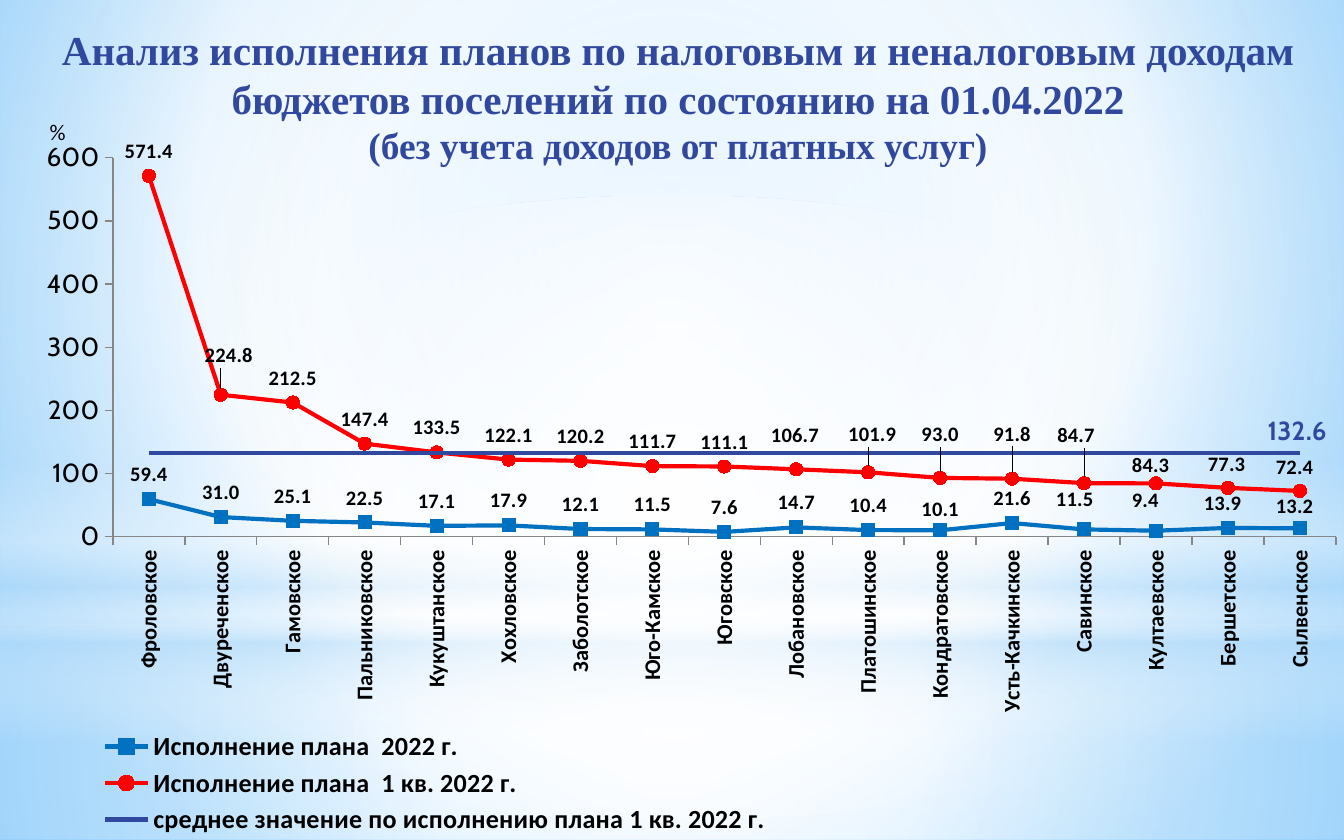
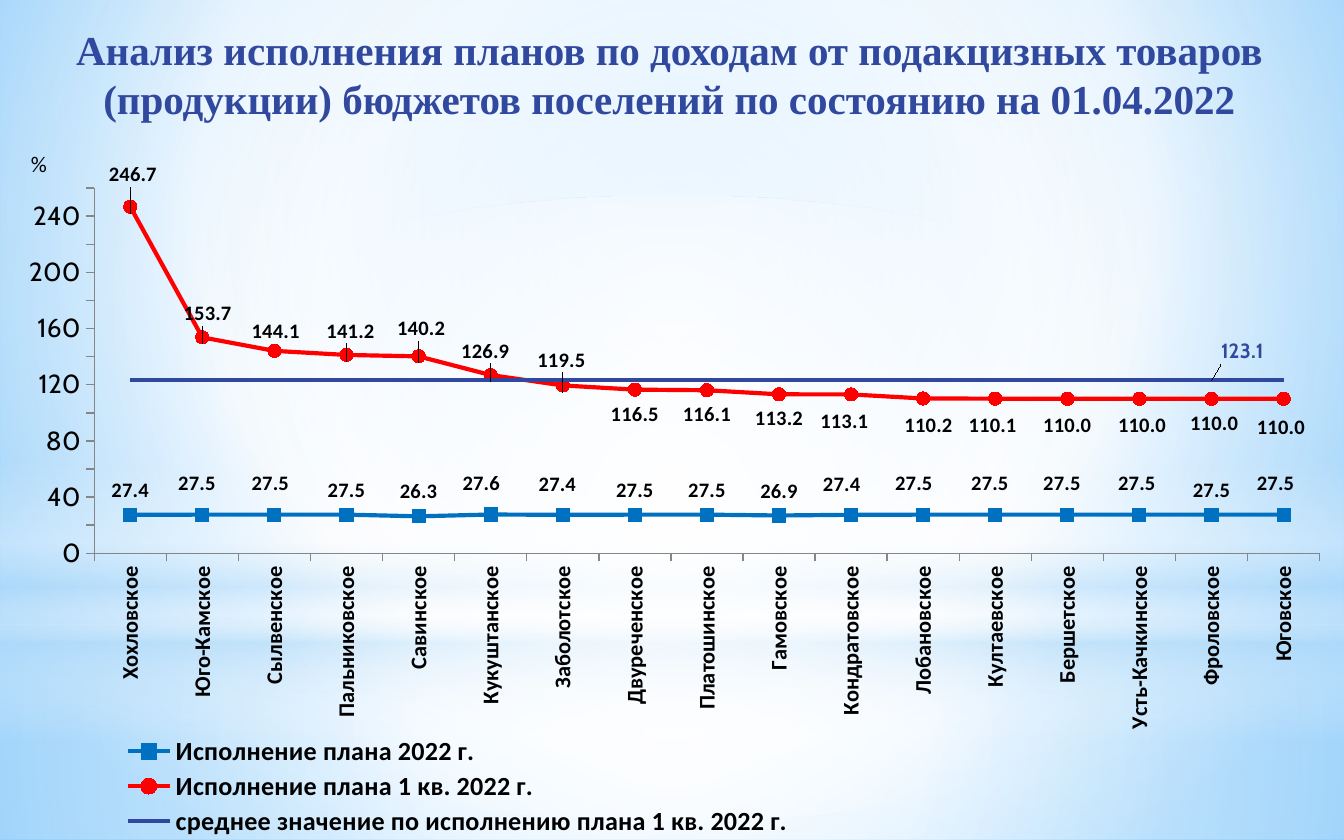
from dataclasses import dataclass, field

from lxml import etree
from pptx import Presentation
from pptx.chart.data import CategoryChartData
from pptx.dml.color import RGBColor
from pptx.enum import chart as ch, shapes, text
from pptx.oxml import parse_xml
from pptx.oxml.ns import nsdecls, qn
from pptx.util import Inches, Pt

INDIGO = RGBColor(0x31, 0x48, 0x9F)
BLUE = RGBColor(0x00, 0x70, 0xC0)
RED = RGBColor(0xFF, 0x00, 0x00)
BLACK = RGBColor(0x00, 0x00, 0x00)
GREY = RGBColor(0x86, 0x86, 0x86)
WHITE = RGBColor(0xFF, 0xFF, 0xFF)
PALE = RGBColor(0xB4, 0xDC, 0xFA)
SKY = RGBColor(0x9E, 0xD5, 0xFF)
DEEP_SKY = RGBColor(0x5B, 0xB9, 0xFF)

TITLE_FONT, CHART_FONT, LABEL_FONT = "Times New Roman", "Cabin", "Calibri"
LABEL_FORMAT = "#,##0.0"
ABOVE, BELOW = ch.XL_LABEL_POSITION.ABOVE, ch.XL_LABEL_POSITION.BELOW
LEADER_EXT = (
    '<c:extLst xmlns:c="http://schemas.openxmlformats.org/drawingml/2006/chart">'
    '<c:ext uri="{CE6537A1-D6FC-4f65-9D91-7224C49458BB}" '
    'xmlns:c15="http://schemas.microsoft.com/office/drawing/2012/chart">'
    '<c15:showLeaderLines val="1"/></c:ext></c:extLst>'
)

Stop = tuple[int, RGBColor, int]      # position %, colour, opacity %
Box = tuple[float, float, float, float]
Nudges = dict[int, tuple[float, float]]  # point index -> label shift in inches


@dataclass
class Glow:
    kind: shapes.MSO_SHAPE
    box: Box
    stops: list[Stop]
    linear: bool = False


@dataclass
class Line:
    name: str
    values: list[float]
    color: RGBColor
    marker: ch.XL_MARKER_STYLE
    position: ch.XL_LABEL_POSITION = ABOVE
    nudges: Nudges = field(default_factory=dict)
    label_all: bool = True
    label_size: int = 11
    label_font: str = LABEL_FONT
    label_color: RGBColor = BLACK
    leader: bool = False


@dataclass
class Report:
    title: list[tuple[str, int]]
    title_box: Box
    chart_box: Box
    categories: list[str]
    lines: list[Line]
    top: int
    step: int
    plot: Box
    legend: Box
    unit: tuple[float, float]


GLOWS = [
    Glow(shapes.MSO_SHAPE.RECTANGLE, (0, 4.65, 10, 1.6),
         [(0, WHITE, 91), (37, WHITE, 76), (100, PALE, 79)]),
    Glow(shapes.MSO_SHAPE.RECTANGLE, (0, 0, 10, 4.65),
         [(0, WHITE, 89), (48, WHITE, 62), (100, PALE, 79)]),
    Glow(shapes.MSO_SHAPE.RECTANGLE, (0, 3.43, 10, 2.08),
         [(0, WHITE, 0), (29, WHITE, 30), (45, PALE, 40), (55, WHITE, 26),
          (65, PALE, 60), (100, WHITE, 0)], linear=True),
    Glow(shapes.MSO_SHAPE.OVAL, (0, 1.46, 10, 4.65), [(0, WHITE, 100), (56, WHITE, 0)]),
]


def report_lines(names: list[str], year: list[float], quarter: list[float], mean: float,
                 year_nudges: Nudges, quarter_nudges: Nudges, mean_nudges: Nudges,
                 quarter_position=ABOVE, mean_size: int = 14, leader: bool = False) -> list[Line]:
    marks = ch.XL_MARKER_STYLE
    return [
        Line(names[0], year, BLUE, marks.SQUARE, nudges=year_nudges),
        Line(names[1], quarter, RED, marks.CIRCLE, quarter_position, quarter_nudges),
        Line("среднее значение по исполнению плана 1 кв. 2022 г.", [mean] * len(year), INDIGO,
             marks.NONE, nudges=mean_nudges, label_all=False, label_size=mean_size,
             label_font=CHART_FONT, label_color=INDIGO, leader=leader),
    ]


REPORTS = [
    Report(
        [("Анализ исполнения планов по налоговым и неналоговым доходам "
          "бюджетов поселений по состоянию на 01.04.2022", 22),
         ("(без учета доходов от платных услуг)", 20)],
        (0.2, 0.13, 9.69, 0.97), (0.04, 0.61, 10, 5.64),
        ["Фроловское", "Двуреченское", "Гамовское", "Пальниковское", "Кукуштанское",
         "Хохловское", "Заболотское", "Юго-Камское", "Юговское", "Лобановское",
         "Платошинское", "Кондратовское", "Усть-Качкинское", "Савинское", "Култаевское",
         "Бершетское", "Сылвенское"],
        report_lines(
            ["Исполнение плана  2022 г.", "Исполнение плана  1 кв. 2022 г."],
            [59.4, 31, 25.1, 22.5, 17.1, 17.9, 12.1, 11.5, 7.6, 14.7, 10.4, 10.1, 21.6,
             11.5, 9.4, 13.9, 13.2],
            [571.4, 224.8, 212.5, 147.4, 133.5, 122.1, 120.2, 111.7, 111.1, 106.7, 101.9,
             93, 91.8, 84.7, 84.3, 77.3, 72.4],
            132.6,
            {11: (0, 0.03), 13: (-0.07, -0.04), 14: (-0.08, -0.04), 15: (-0.04, 0),
             16: (-0.04, 0.02)},
            {1: (0.06, -0.11), 9: (-0.01, -0.07), 10: (0.03, -0.1), 11: (0, -0.14),
             12: (0, -0.15), 13: (-0.06, -0.17), 14: (-0.04, 0.05), 15: (-0.01, 0.01),
             16: (-0.04, 0.01)},
            {16: (-0.02, 0)}),
        600, 100, (0.08, 0.1, 0.91, 0.5), (0.06, 0.85, 0.52, 0.15), (0.03, 0.04)),
    Report(
        [("Анализ исполнения планов по доходам от подакцизных товаров "
          "(продукции) бюджетов поселений по состоянию на 01.04.2022", 22)],
        (0, 0.13, 9.96, 0.8), (0, 0.92, 10.02, 5.33),
        ["Хохловское", "Юго-Камское", "Сылвенское", "Пальниковское", "Савинское",
         "Кукуштанское", "Заболотское", "Двуреченское", "Платошинское", "Гамовское",
         "Кондратовское", "Лобановское", "Култаевское", "Бершетское", "Усть-Качкинское",
         "Фроловское", "Юговское"],
        report_lines(
            ["Исполнение плана 2022 г.", "Исполнение плана 1 кв. 2022 г."],
            [27.4, 27.5, 27.5, 27.5, 26.3, 27.6, 27.4, 27.5, 27.5, 26.9, 27.4] + [27.5] * 6,
            [246.7, 153.7, 144.1, 141.2, 140.2, 126.9, 119.5, 116.5, 116.1, 113.2, 113.1,
             110.2, 110.1, 110, 110, 110, 110],
            123.1,
            {1: (-0.04, -0.05), 2: (-0.03, -0.05), 5: (-0.07, -0.05), 6: (-0.04, -0.04),
             10: (-0.07, -0.04), 11: (-0.07, -0.05), 12: (-0.04, -0.05),
             13: (-0.04, -0.05), 14: (-0.02, -0.05), 16: (-0.06, -0.05)},
            {0: (0.02, -0.42), 1: (0.04, -0.36), 2: (0.01, -0.33), 3: (0.03, -0.36),
             4: (0.02, -0.39), 5: (-0.04, -0.36), 6: (-0.01, -0.37), 10: (-0.05, 0.02),
             11: (0.04, 0.02), 12: (-0.02, 0.02), 13: (0, 0.02), 14: (0.02, 0.02),
             15: (0.02, 0), 16: (-0.02, 0.03)},
            {15: (0.23, -0.08)}, BELOW, mean_size=11, leader=True),
        260, 20, (0.07, 0.09, 0.91, 0.51), (0.08, 0.85, 0.52, 0.15), (0.02, 0.03)),
]


def inches(box: Box) -> list[int]:
    return [Inches(v) for v in box]


def set_gradient(parent, stops: list[Stop], focus: Box = (50, 50, 50, 50),
                 linear: bool = False) -> None:
    """Swap the solid fill inside parent for a gradient."""
    marks = "".join(
        f'<a:gs pos="{pos * 1000}"><a:srgbClr val="{color}">'
        f'<a:alpha val="{alpha * 1000}"/></a:srgbClr></a:gs>' for pos, color, alpha in stops)
    sides = " ".join(f'{side}="{v * 1000}"' for side, v in zip("ltrb", focus))
    shade = ('<a:lin ang="5400000" scaled="0"/>' if linear else
             f'<a:path path="circle"><a:fillToRect {sides}/></a:path>')
    solid = parent.find(qn("a:solidFill"))
    parent.replace(solid, parse_xml(
        f'<a:gradFill {nsdecls("a")} rotWithShape="1"><a:gsLst>{marks}</a:gsLst>{shade}</a:gradFill>'))


def set_layout(parent, index: int, x: float, y: float, size=None, kind: str = "edge",
               inner: bool = False) -> None:
    """Place a chart part by fractions of the chart; kind 'factor' means a shift."""
    for old in parent.findall(qn("c:layout")):
        parent.remove(old)
    items = [("layoutTarget", "inner")] if inner else []
    if kind == "edge":
        items += [("xMode", "edge"), ("yMode", "edge")]
    items += [("x", x), ("y", y)]
    if size:
        items += [("w", size[0]), ("h", size[1])]
    body = "".join(f'<c:{tag} val="{val}"/>' for tag, val in items)
    parent.insert(index, parse_xml(
        f'<c:layout {nsdecls("c")}><c:manualLayout>{body}</c:manualLayout></c:layout>'))


def style_font(font, size: int, name: str = LABEL_FONT, bold: bool = True,
               color: RGBColor = BLACK) -> None:
    font.size, font.name, font.bold = Pt(size), name, bold
    font.color.rgb = color


def build_backdrop(prs, s) -> None:
    """Draw the shared glows on s, then move them to the slide master."""
    master = prs.slide_master
    master.background.fill.solid()
    set_gradient(master.element.find(".//" + qn("p:bgPr")),
                 [(0, SKY, 100), (60, WHITE, 100), (100, DEEP_SKY, 100)], (20, 10, 20, 60))
    for index, glow in enumerate(GLOWS):
        sp = s.shapes.add_shape(glow.kind, *inches(glow.box))
        sp.shadow.inherit = False
        sp.line.fill.background()
        sp.fill.solid()
        set_gradient(sp.element.spPr, glow.stops, linear=glow.linear)
        master.shapes.element.insert(2 + index, sp.element)


def add_title(s, box: Box, parts: list[tuple[str, int]]) -> None:
    tf = s.shapes.add_textbox(*inches(box)).text_frame
    tf.word_wrap = True
    p = tf.paragraphs[0]
    p.alignment = text.PP_ALIGN.CENTER
    for index, (words, size) in enumerate(parts):
        if index:
            p.add_line_break()
        r = p.add_run()
        r.text = words
        style_font(r.font, size, TITLE_FONT, color=INDIGO)


def style_line(series, line: Line, width: float, height: float) -> None:
    series.smooth = False
    series.format.line.color.rgb = line.color
    series.format.line.width = Pt(2.25)
    series.marker.style = line.marker
    if line.marker != ch.XL_MARKER_STYLE.NONE:
        series.marker.size = 7
        series.marker.format.fill.solid()
        series.marker.format.fill.fore_color.rgb = line.color
        series.marker.format.line.color.rgb = line.color

    labels = series.data_labels
    labels.show_value = line.label_all
    labels.number_format, labels.number_format_is_linked = LABEL_FORMAT, False
    labels.position = line.position
    font = dict(size=line.label_size, name=line.label_font, color=line.label_color)
    style_font(labels.font, **font)
    for index, (dx, dy) in line.nudges.items():
        label = series.points[index].data_label
        style_font(label.font, **font)
        label.position = line.position
        node = label._get_or_add_dLbl()
        set_layout(node, 1, dx / width, dy / height, kind="factor")
        node.insert(2, parse_xml(
            f'<c:numFmt {nsdecls("c")} formatCode="{LABEL_FORMAT}" sourceLinked="0"/>'))
    block = series._element.find(qn("c:dLbls"))
    for old in block.findall(qn("c:showLeaderLines")):
        block.remove(old)
    if line.leader:
        block.append(etree.fromstring(LEADER_EXT))


def style_axes(chart, report: Report) -> None:
    cat, val = chart.category_axis, chart.value_axis
    for axis in (cat, val):
        axis.has_major_gridlines = False
        axis.major_tick_mark = ch.XL_TICK_MARK.OUTSIDE
        axis.minor_tick_mark = ch.XL_TICK_MARK.NONE
        axis.format.line.color.rgb = GREY
    style_font(cat.tick_labels.font, 12)
    cat._element.find(qn("c:txPr")).find(qn("a:bodyPr")).set("rot", "-5400000")
    style_font(val.tick_labels.font, 14, CHART_FONT, bold=False)
    val.tick_labels.number_format = "#,##0"
    val.tick_labels.number_format_is_linked = False
    val.minimum_scale, val.maximum_scale, val.major_unit = 0, report.top, report.step
    tf = val.axis_title.text_frame
    tf.text = "%"
    style_font(tf.paragraphs[0].runs[0].font, 12, bold=False)
    tf._txBody.find(qn("a:bodyPr")).set("rot", "0")
    set_layout(val._element.find(qn("c:title")), 1, *report.unit)


def add_line_chart(s, report: Report) -> None:
    data = CategoryChartData(number_format="0.0")
    data.categories = report.categories
    for line in report.lines:
        data.add_series(line.name, line.values)
    chart = s.shapes.add_chart(ch.XL_CHART_TYPE.LINE_MARKERS, *inches(report.chart_box), data).chart
    chart.has_title = False
    style_font(chart.font, 18, CHART_FONT, bold=False)
    chart.plots[0].vary_by_categories = False
    for series, line in zip(chart.plots[0].series, report.lines):
        style_line(series, line, *report.chart_box[2:])
    style_axes(chart, report)
    chart.has_legend = True
    chart.legend.position = ch.XL_LEGEND_POSITION.BOTTOM
    chart.legend.include_in_layout = False
    style_font(chart.legend.font, 14)
    set_layout(chart.legend._element, 1, *report.legend[:2], size=report.legend[2:])
    plot_area = chart._chartSpace.find(".//" + qn("c:plotArea"))
    set_layout(plot_area, 0, *report.plot[:2], size=report.plot[2:], inner=True)


def main() -> None:
    prs = Presentation()
    prs.slide_width, prs.slide_height = Inches(10), Inches(6.25)
    for index, report in enumerate(REPORTS):
        s = prs.slides.add_slide(prs.slide_layouts[6])
        if index == 0:
            build_backdrop(prs, s)
        add_title(s, report.title_box, report.title)
        add_line_chart(s, report)
    prs.save("out.pptx")


if __name__ == "__main__":
    main()
